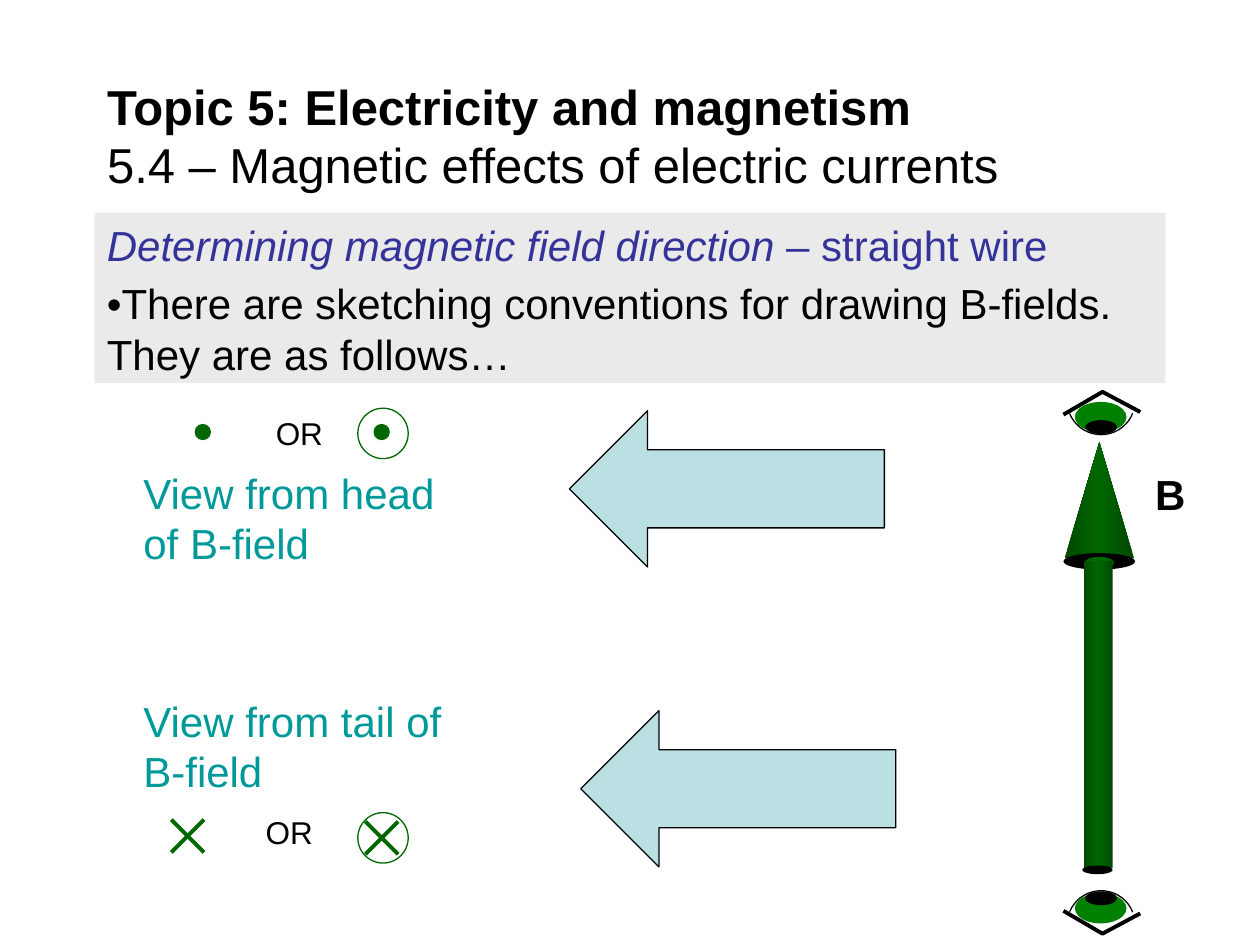
import dataclasses
import typing

import lxml.etree
import pptx
import pptx.dml.color
import pptx.enum.shapes
import pptx.enum.text
import pptx.oxml.ns
import pptx.util

Pt = pptx.util.Pt
Kind = pptx.enum.shapes.MSO_SHAPE
Point = tuple[float, float]

BLACK, WHITE = "000000", "FFFFFF"
GREEN, DARK_GREEN, IRIS = "006600", "004900", "008000"
TEAL, BLUE, PALE_BLUE, GREY = "009999", "333399", "BBE0E3", "EAEAEA"
MIRROR = 757.4  # sum of the heights of matching points on the two eyes


@dataclasses.dataclass
class Part:
    kind: typing.Any
    left: float
    top: float
    width: float
    height: float
    fill: str | None = None
    line: str | None = None


@dataclasses.dataclass
class Span:
    text: str
    size: float
    color: str = BLACK
    bold: bool = False
    italic: bool = False


@dataclasses.dataclass
class Label:
    left: float
    top: float
    width: float
    height: float
    span: Span
    wrap: bool = False


def rgb(value: str) -> pptx.dml.color.RGBColor:
    return pptx.dml.color.RGBColor.from_string(value)


def paint(shape, fill: str | None, line: str | None, weight: float = 0.75) -> None:
    shape.shadow.inherit = False
    if fill:
        shape.fill.solid()
        shape.fill.fore_color.rgb = rgb(fill)
    else:
        shape.fill.background()
    if line:
        shape.line.color.rgb = rgb(line)
        shape.line.width = Pt(weight)
    else:
        shape.line.fill.background()


def draw_part(page, part: Part):
    box = (part.left, part.top, part.width, part.height)
    shape = page.shapes.add_shape(part.kind, *map(Pt, box))
    paint(shape, part.fill, part.line)
    return shape


def draw_outline(page, points: list[Point], closed: bool, **style) -> None:
    corners = [(Pt(x), Pt(y)) for x, y in points]
    builder = page.shapes.build_freeform(*corners[0], scale=1)
    builder.add_line_segments(corners[1:], close=closed)
    paint(builder.convert_to_shape(), **style)


def shade(shape) -> None:
    """Fill with a horizontal gradient, brightest in the middle."""
    shape.fill.gradient()
    shape.fill.gradient_angle = 0
    qn = pptx.oxml.ns.qn
    stops = shape._element.spPr.find(".//" + qn("a:gsLst"))
    for stop in list(stops):
        stops.remove(stop)
    for position, color in ((0, DARK_GREEN), (50000, GREEN), (100000, DARK_GREEN)):
        stop = lxml.etree.SubElement(stops, qn("a:gs"), pos=str(position))
        lxml.etree.SubElement(stop, qn("a:srgbClr"), val=color)


def write(para, span: Span) -> None:
    para.alignment = pptx.enum.text.PP_ALIGN.LEFT
    run = para.add_run()
    run.text = span.text
    formats = {"name": "Arial", "size": Pt(span.size), "bold": span.bold, "italic": span.italic}
    for name, value in formats.items():
        setattr(run.font, name, value)
    run.font.color.rgb = rgb(span.color)


def draw_label(page, label: Label) -> None:
    place = (label.left, label.top, label.width, label.height)
    frame = page.shapes.add_textbox(*map(Pt, place)).text_frame
    frame.word_wrap = label.wrap
    frame.auto_size = pptx.enum.text.MSO_AUTO_SIZE.SHAPE_TO_FIT_TEXT
    write(frame.paragraphs[0], label.span)


def draw_eye(page, flipped: bool) -> None:
    def turn(points: list[Point]) -> list[Point]:
        return [(x, MIRROR - y if flipped else y) for x, y in points]

    for part in (
        Part(Kind.OVAL, 609.8, 209.5, 38.9, 38.9, WHITE, BLACK),
        Part(Kind.OVAL, 614.2, 229.7, 29.5, 17.3, IRIS),
        Part(Kind.OVAL, 620.6, 240.5, 17.3, 7.2, BLACK, BLACK),
    ):
        top = MIRROR - part.top - part.height if flipped else part.top
        draw_part(page, dataclasses.replace(part, top=top))
    cover = [(608.4, 239), (629.3, 218.2), (650.2, 239), (650.2, 205.9), (607.7, 205.9)]
    lid = [(607.7, 236.9), (630, 223.9), (651.6, 235.4)]
    draw_outline(page, turn(cover), True, fill=WHITE, line=None)
    draw_outline(page, turn(lid), False, fill=None, line=BLACK, weight=2.25)


def draw_cross(page, left: float, top: float, size: float = 18.7) -> None:
    right, bottom = left + size, top + size
    for ends in ((left, bottom, right, top), (left, top, right, bottom)):
        line = page.shapes.add_connector(
            pptx.enum.shapes.MSO_CONNECTOR.STRAIGHT, *map(Pt, ends))
        line.line.color.rgb = rgb(GREEN)
        line.line.width = Pt(2.25)
        lxml.etree.SubElement(line._element.spPr, pptx.oxml.ns.qn("a:effectLst"))


def draw_title(page) -> None:
    title = page.shapes.title
    place = {"left": 54, "top": 41.8, "width": 612, "height": 70.6}
    for name, value in place.items():
        setattr(title, name, Pt(value))
    frame = title.text_frame
    formats = {
        "word_wrap": True,
        "auto_size": pptx.enum.text.MSO_AUTO_SIZE.NONE,
        "vertical_anchor": pptx.enum.text.MSO_ANCHOR.MIDDLE,
    }
    for name, value in formats.items():
        setattr(frame, name, value)
    para = frame.paragraphs[0]
    write(para, Span("Topic 5: Electricity and magnetism", 28, bold=True))
    para.add_line_break()
    write(para, Span("5.4 – Magnetic effects of electric currents", 28))


def draw_panel(page) -> None:
    frame = draw_part(page, Part(Kind.RECTANGLE, 54, 121.7, 612, 97.2, GREY)).text_frame
    frame.word_wrap = True
    frame.vertical_anchor = pptx.enum.text.MSO_ANCHOR.TOP
    heading = [Span("Determining magnetic field direction ", 24, BLUE, italic=True),
               Span("– straight wire", 24, BLUE)]
    body = [Span("•There are sketching conventions for drawing B-fields. "
                 "They are as follows…", 24)]
    for para, spans in ((frame.paragraphs[0], heading), (frame.add_paragraph(), body)):
        para.space_before = Pt(4.8)
        for span in spans:
            write(para, span)


def draw_field_arrow(page) -> None:
    shade(draw_part(page, Part(Kind.ISOSCELES_TRIANGLE, 608.4, 252.7, 39.6, 66.2)))
    draw_part(page, Part(Kind.OVAL, 607.7, 316.1, 41, 9.4, BLACK))
    draw_part(page, Part(Kind.OVAL, 619.9, 318.2, 16.6, 6.5, GREEN))
    shade(draw_part(page, Part(Kind.RECTANGLE, 619.2, 320.4, 16.6, 175.7)))
    draw_part(page, Part(Kind.OVAL, 618.5, 494.6, 17.3, 5, BLACK))


def main() -> None:
    deck = pptx.Presentation()
    deck.slide_width, deck.slide_height = Pt(720), Pt(540)
    page = deck.slides.add_slide(deck.slide_layouts[5])
    draw_title(page)

    # Field vector seen by an eye at each end
    draw_eye(page, flipped=False)
    draw_panel(page)
    draw_field_arrow(page)
    draw_eye(page, flipped=True)

    # Block arrows pointing to the symbols
    for left, top in ((325.4, 234.7), (331.9, 406.1)):
        arrow = draw_part(page, Part(Kind.LEFT_ARROW, left, top, 180, 89.3, PALE_BLUE, BLACK))
        arrow.adjustments[1] = 0.5

    # Dot and cross symbols, plain and ringed
    for top in (233.3, 464.4):
        draw_part(page, Part(Kind.OVAL, 204.5, top, 28.8, 28.8, None, GREEN))
    for left in (111.6, 213.8):
        draw_part(page, Part(Kind.OVAL, left, 242.6, 8.6, 8.6, GREEN, GREEN))
    for left, top in ((97.9, 468.4), (208.8, 469.4)):
        draw_cross(page, left, top)

    # Captions
    for label in (
        Label(653, 264.2, 31.7, 36, Span("B", 24, bold=True)),
        Label(150.5, 233.3, 41.8, 28.8, Span("OR", 18)),
        Label(144.7, 460.8, 41.8, 28.8, Span("OR", 18)),
        Label(74.9, 263.5, 201.6, 65.5, Span("View from head of B-field", 24, TEAL), True),
        Label(74.9, 393.8, 190.1, 65.5, Span("View from tail of B-field", 24, TEAL), True),
    ):
        draw_label(page, label)

    deck.save("out.pptx")


if __name__ == "__main__":
    main()
